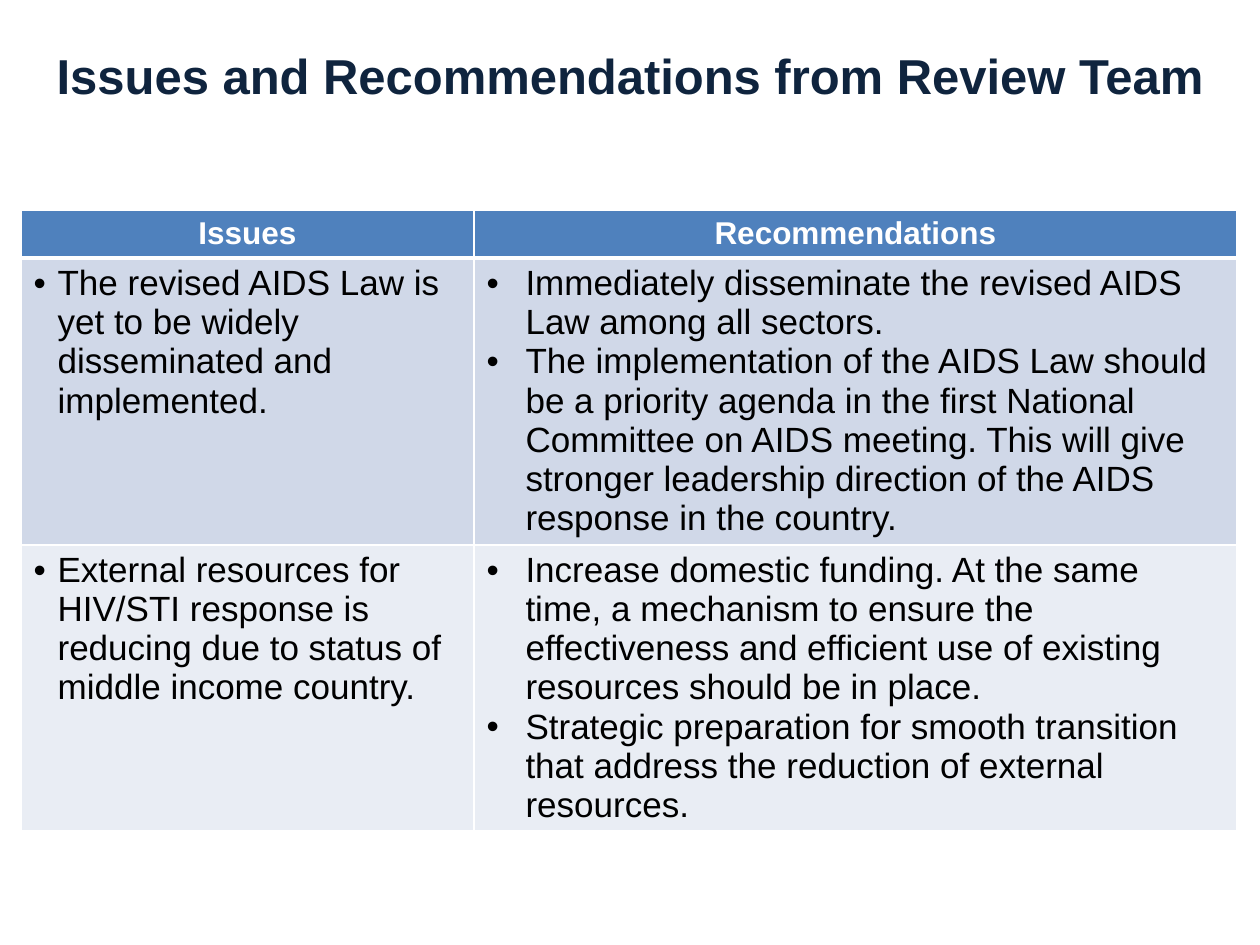
from lxml.etree import SubElement
from pptx import Presentation
from pptx.dml.color import RGBColor
from pptx.enum.text import MSO_ANCHOR, PP_ALIGN
from pptx.oxml.ns import qn
from pptx.util import Pt

WHITE = RGBColor(0xFF, 0xFF, 0xFF)
BLACK = RGBColor(0x00, 0x00, 0x00)
NAVY = RGBColor(0x0F, 0x24, 0x3E)
BLUE = RGBColor(0x4F, 0x81, 0xBD)
BAND_DARK = RGBColor(0xD0, 0xD8, 0xE8)
BAND_LIGHT = RGBColor(0xE9, 0xED, 0xF4)

HEADERS = ["Issues", "Recommendations"]
ROWS = [
    (["The revised AIDS Law is yet to be widely disseminated and implemented."],
     ["Immediately disseminate the revised AIDS Law among all sectors.",
      "The implementation of the AIDS Law should be a priority agenda in the "
      "first National Committee on AIDS meeting. This will give stronger "
      "leadership direction of the AIDS response in the country."]),
    (["External resources for HIV/STI response is reducing due to status of "
      "middle income country."],
     ["Increase domestic funding. At the same time, a mechanism to ensure the "
      "effectiveness and efficient use of existing resources should be in place.",
      "Strategic preparation for smooth transition that address the reduction "
      "of external resources."]),
]
COL_WIDTHS = [453, 763]
ROW_HEIGHTS = [46, 287, 285]
INDENTS = [24, 39]


def px(n):
    return round(n * 914400 / 126)


def add_text(tf, texts, size=20, color=BLACK, bold=False, align=PP_ALIGN.LEFT, indent=0):
    tf.word_wrap = True
    for i, text in enumerate(texts):
        p = tf.add_paragraph() if i else tf.paragraphs[0]
        p.alignment = align
        r = p.add_run()
        r.text = text
        r.font.name = "Arial"
        r.font.size = Pt(size)
        r.font.bold = bold
        r.font.color.rgb = color
        if indent:
            pPr = p._p.get_or_add_pPr()
            pPr.set("marL", str(px(indent)))
            pPr.set("indent", str(-px(indent)))
            SubElement(pPr, qn("a:buFont"), typeface="Arial")
            SubElement(pPr, qn("a:buChar"), char="•")


def style_cell(cell, fill, top=1, bottom=1):
    tcPr = cell._tc.get_or_add_tcPr()
    for side, width in (("L", 1), ("R", 1), ("T", top), ("B", bottom)):
        ln = SubElement(tcPr, qn(f"a:ln{side}"), w=str(Pt(width)))
        SubElement(SubElement(ln, qn("a:solidFill")), qn("a:srgbClr"), val=str(WHITE))
    cell.fill.solid()
    cell.fill.fore_color.rgb = fill


def add_title(s, x, y, w, h):
    sp = s.shapes.add_textbox(px(x), px(y), px(w), px(h))
    sp.fill.solid()
    sp.fill.fore_color.rgb = WHITE
    tf = sp.text_frame
    tf.vertical_anchor = MSO_ANCHOR.MIDDLE
    add_text(tf, ["Issues and Recommendations from Review Team"],
             size=28, color=NAVY, bold=True, align=PP_ALIGN.CENTER)


def add_review_table(s, x, y):
    table = s.shapes.add_table(len(ROWS) + 1, len(HEADERS), px(x), px(y),
                               px(sum(COL_WIDTHS)), px(sum(ROW_HEIGHTS))).table
    for col, width in zip(table.columns, COL_WIDTHS):
        col.width = px(width)
    for row, height in zip(table.rows, ROW_HEIGHTS):
        row.height = px(height)
    for c, header in enumerate(HEADERS):
        cell = table.cell(0, c)
        style_cell(cell, BLUE, bottom=3)
        add_text(cell.text_frame, [header], size=18, color=WHITE, bold=True,
                 align=PP_ALIGN.CENTER)
    for r, (texts_by_col, fill) in enumerate(zip(ROWS, (BAND_DARK, BAND_LIGHT)), 1):
        for c, texts in enumerate(texts_by_col):
            cell = table.cell(r, c)
            style_cell(cell, fill, top=3 if r == 1 else 1)
            add_text(cell.text_frame, texts, indent=INDENTS[c])


def main():
    prs = Presentation()
    prs.slide_width, prs.slide_height = px(1260), px(945)
    s = prs.slides.add_slide(prs.slide_layouts[6])
    add_review_table(s, 21, 210)
    add_title(s, 0, -4, 1260, 158)
    prs.save("out.pptx")


if __name__ == "__main__":
    main()
